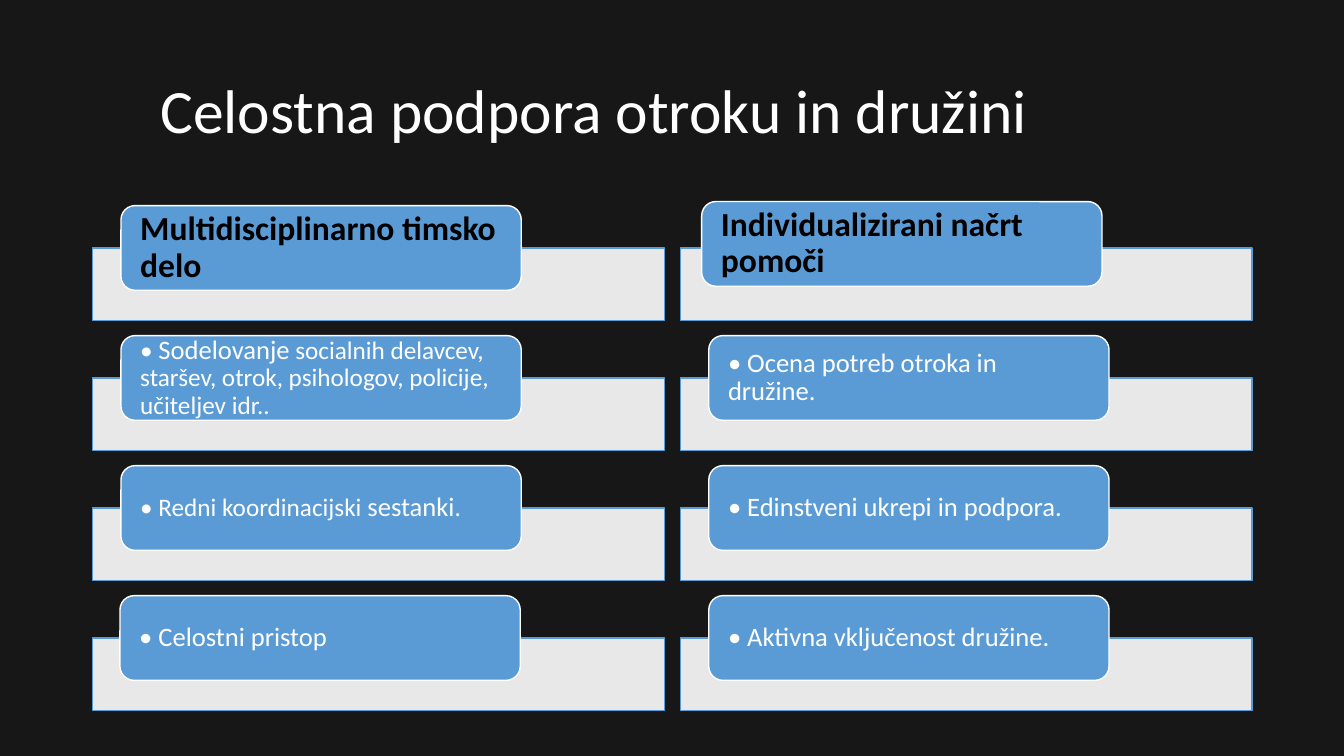
from lxml.etree import SubElement
from pptx import Presentation
from pptx.dml.color import RGBColor
from pptx.enum.shapes import MSO_SHAPE
from pptx.enum.text import MSO_ANCHOR, PP_ALIGN
from pptx.oxml.ns import qn
from pptx.util import Inches, Pt

DARK = RGBColor(0x17, 0x17, 0x17)
WHITE = RGBColor(0xFF, 0xFF, 0xFF)
BLACK = RGBColor(0x00, 0x00, 0x00)
BLUE = RGBColor(0x5B, 0x9B, 0xD5)

# Grid of bars, with a card overlapping the top of each bar (inches)
GRID_LEFT, GRID_TOP = 0.92, 2.46
COL_STEP, ROW_STEP = 5.83, 1.29
BAR_W, BAR_H = 5.67, 0.72
CARD_W, CARD_H = 3.97, 0.84
CARD_DX, CARD_DY = 0.28, -0.42

TITLE_FONT = {"name": "Calibri", "size": Pt(44), "bold": False}
HEAD_FONT = {"name": "Calibri", "size": Pt(24), "bold": True}
ITEM_FONT = {"name": "Calibri", "bold": False}

# Each card is a list of (text, size) runs
COLUMNS = [
    ["Multidisciplinarno timsko delo",
     [("• ", 18), ("Sodelovanje", 19),
      (" socialnih delavcev, staršev, otrok, psihologov, policije, "
       "učiteljev idr..", 18)],
     [("• Redni koordinacijski ", 18), ("sestanki", 19), (".", 18)],
     [("• Celostni pristop", 19)]],
    ["Individualizirani načrt pomoči",
     [("• Ocena potreb otroka in družine.", 19)],
     [("• Edinstveni ukrepi in podpora.", 19)],
     [("• Aktivna vključenost družine.", 19)]],
]
# Cards shifted off the grid: (column, row) -> (dx, dy)
NUDGES = {(1, 0): (-0.07, -0.04), (0, 3): (-0.01, 0)}


def set_attrs(obj, values):
    for name, value in values.items():
        setattr(obj, name, value)


def add_run(p, text, font, color):
    r = p.add_run()
    r.text = text
    set_attrs(r.font, font)
    r.font.color.rgb = color


def add_box(s, kind, left, top, width, height, fill, line):
    sp = s.shapes.add_shape(kind, Inches(left), Inches(top),
                            Inches(width), Inches(height))
    sp.shadow.inherit = False
    sp.fill.solid()
    sp.fill.fore_color.rgb = fill
    sp.line.color.rgb = line
    sp.line.width = Pt(1)
    return sp


def add_bar(s, left, top):
    sp = add_box(s, MSO_SHAPE.RECTANGLE, left, top, BAR_W, BAR_H, WHITE, BLUE)
    color = sp.fill._xPr.find(qn("a:solidFill"))[0]
    SubElement(color, qn("a:alpha"), val="90000")


def add_card(s, left, top, content):
    sp = add_box(s, MSO_SHAPE.ROUNDED_RECTANGLE, left, top,
                 CARD_W, CARD_H, BLUE, WHITE)
    tf = sp.text_frame
    set_attrs(tf, {"word_wrap": True, "vertical_anchor": MSO_ANCHOR.MIDDLE,
                   "margin_left": Inches(0.15), "margin_right": Inches(0.15),
                   "margin_top": 0, "margin_bottom": 0})
    p = tf.paragraphs[0]
    set_attrs(p, {"alignment": PP_ALIGN.LEFT, "line_spacing": 0.9})
    if isinstance(content, str):
        add_run(p, content, HEAD_FONT, BLACK)
    else:
        for text, size in content:
            add_run(p, text, {**ITEM_FONT, "size": Pt(size)}, WHITE)


def add_title(s, text):
    sp = s.shapes.title
    set_attrs(sp, {"left": Inches(1.49), "top": Inches(0.4),
                   "width": Inches(10.92), "height": Inches(1.45)})
    sp.text_frame.vertical_anchor = MSO_ANCHOR.MIDDLE
    p = sp.text_frame.paragraphs[0]
    set_attrs(p, {"alignment": PP_ALIGN.LEFT, "line_spacing": 0.9})
    add_run(p, text, TITLE_FONT, WHITE)


def main():
    prs = Presentation()
    prs.slide_width, prs.slide_height = Inches(13.33), Inches(7.5)
    s = prs.slides.add_slide(prs.slide_layouts[5])
    s.background.fill.solid()
    s.background.fill.fore_color.rgb = DARK

    add_title(s, "Celostna podpora otroku in družini")

    # Two columns of bars and cards
    for col, cards in enumerate(COLUMNS):
        for row, content in enumerate(cards):
            left = GRID_LEFT + col * COL_STEP
            top = GRID_TOP + row * ROW_STEP
            dx, dy = NUDGES.get((col, row), (0, 0))
            add_bar(s, left, top)
            add_card(s, left + CARD_DX + dx, top + CARD_DY + dy, content)

    prs.save("out.pptx")


if __name__ == "__main__":
    main()
